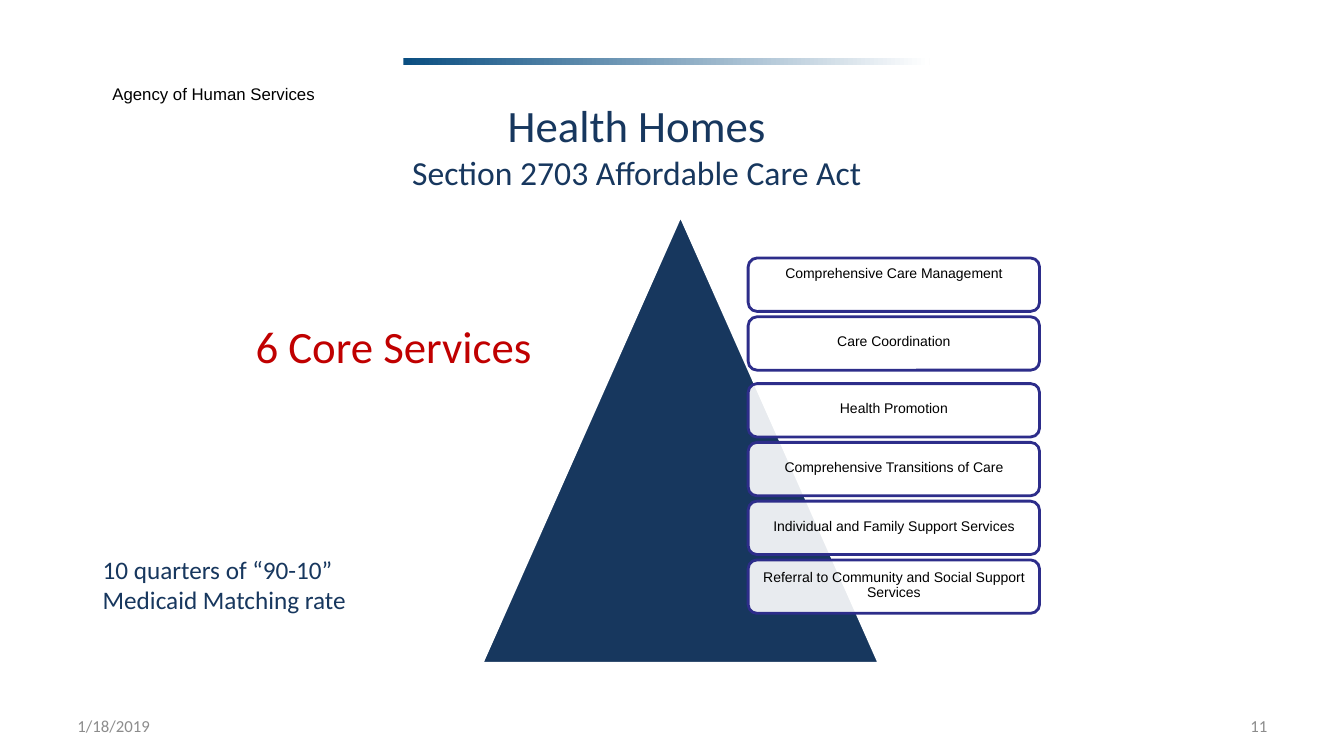
from lxml import etree
from pptx import Presentation
from pptx import util as u
from pptx.dml.color import RGBColor
from pptx.enum import shapes, text
from pptx.oxml.ns import qn

COLORS = {"navy": "17375E", "red": "C00000", "gray": "8C8C8C", "black": "000000",
          "white": "FFFFFF", "border": "2D2D8A", "band": "0A4E81"}
ALIGN, ANCHOR = text.PP_ALIGN, text.MSO_ANCHOR


def rgb(name):
    return RGBColor.from_string(COLORS[name])


def write(box, *lines, sizes=(12,), font="Calibri", color="navy", align=ALIGN.LEFT,
          anchor=ANCHOR.TOP, wrap=True, margins=(0.1, 0.05, 0.1, 0.05), spacing=1.0):
    frame = box.text_frame
    frame.auto_size = text.MSO_AUTO_SIZE.NONE
    frame.word_wrap = wrap
    frame.vertical_anchor = anchor
    (frame.margin_left, frame.margin_top,
     frame.margin_right, frame.margin_bottom) = [u.Inches(m) for m in margins]
    for index, (line, size) in enumerate(zip(lines, sizes)):
        para = frame.paragraphs[0] if index == 0 else frame.add_paragraph()
        para.alignment = align
        para.line_spacing = spacing
        span = para.add_run()
        span.text = line
        span.font.size = u.Pt(size)
        span.font.name = font
        span.font.color.rgb = rgb(color)


deck = Presentation()
deck.slide_width, deck.slide_height = u.Inches(13.33), u.Inches(7.5)
page = deck.slides.add_slide(deck.slide_layouts[5])

# Gradient band
band = page.shapes.add_shape(shapes.MSO_SHAPE.RECTANGLE, u.Inches(4), u.Inches(0.58),
                             u.Inches(5.22), u.Inches(0.07))
band.shadow.inherit = False
band.line.fill.background()
band.fill.gradient()
band.fill.gradient_angle = 0
for stop, name in zip(band.fill.gradient_stops, ("band", "white")):
    stop.color.rgb = rgb(name)

# Title
title = page.shapes.title
title.left, title.top = u.Inches(2.73), u.Inches(0.92)
title.width, title.height = u.Inches(7.17), u.Inches(1.04)
write(title, "Health Homes", "Section 2703 Affordable Care Act",
      sizes=(32, 24), align=ALIGN.CENTER)

# Text around the pyramid, and the footer
footer = {"color": "gray", "anchor": ANCHOR.MIDDLE}
labels = [
    ("Agency of Human Services", (0.24, 0.78, 3.76, 0.3),
     {"font": "Arial", "color": "black", "align": ALIGN.CENTER}),
    ("6 Core Services", (2.42, 3.11, 2.97, 0.64),
     {"sizes": (32,), "color": "red", "align": ALIGN.CENTER, "wrap": False}),
    ("10 quarters of “90-10” Medicaid Matching rate", (0.92, 5.45, 3.25, 0.71),
     {"sizes": (18,)}),
    ("1/18/2019", (0.67, 7, 3.11, 0.4), footer),
    ("11", (9.56, 7, 3.11, 0.4), {**footer, "align": ALIGN.RIGHT}),
]
for label, place, style in labels:
    box = page.shapes.add_textbox(*[u.Inches(n) for n in place])
    write(box, label, **style)

# Pyramid
pyramid = page.shapes.add_shape(shapes.MSO_SHAPE.ISOSCELES_TRIANGLE, u.Inches(4.78),
                                u.Inches(2.14), u.Inches(3.94), u.Inches(4.44))
pyramid.shadow.inherit = False
pyramid.fill.solid()
pyramid.fill.fore_color.rgb = rgb("navy")
pyramid.line.color.rgb = rgb("white")
pyramid.line.width = u.Pt(2)

# Core services: equal steps, with a wider gap after the second
services = ["Comprehensive Care Management", "Care Coordination", "Health Promotion",
            "Comprehensive Transitions of Care", "Individual and Family Support Services",
            "Referral to Community and Social Support Services"]
for index, service in enumerate(services):
    top = 2.56 + 0.583 * index + (0.08 if index >= 2 else 0)
    card = page.shapes.add_shape(shapes.MSO_SHAPE.ROUNDED_RECTANGLE, u.Inches(7.42),
                                 u.Inches(top), u.Inches(2.89), u.Inches(0.53))
    card.shadow.inherit = False
    card.fill.solid()
    card.fill.fore_color.rgb = rgb("white")
    solid = card.fill._xPr.find(qn("a:solidFill"))
    etree.SubElement(solid[0], qn("a:alpha"), val="90000")
    card.line.color.rgb = rgb("border")
    card.line.width = u.Pt(2)
    write(card, service, sizes=(10,), font="Arial", color="black", align=ALIGN.CENTER,
          anchor=ANCHOR.TOP if index == 0 else ANCHOR.MIDDLE,
          margins=(0.06, 0.06, 0.06, 0.08), spacing=0.9)

deck.save("out.pptx")
